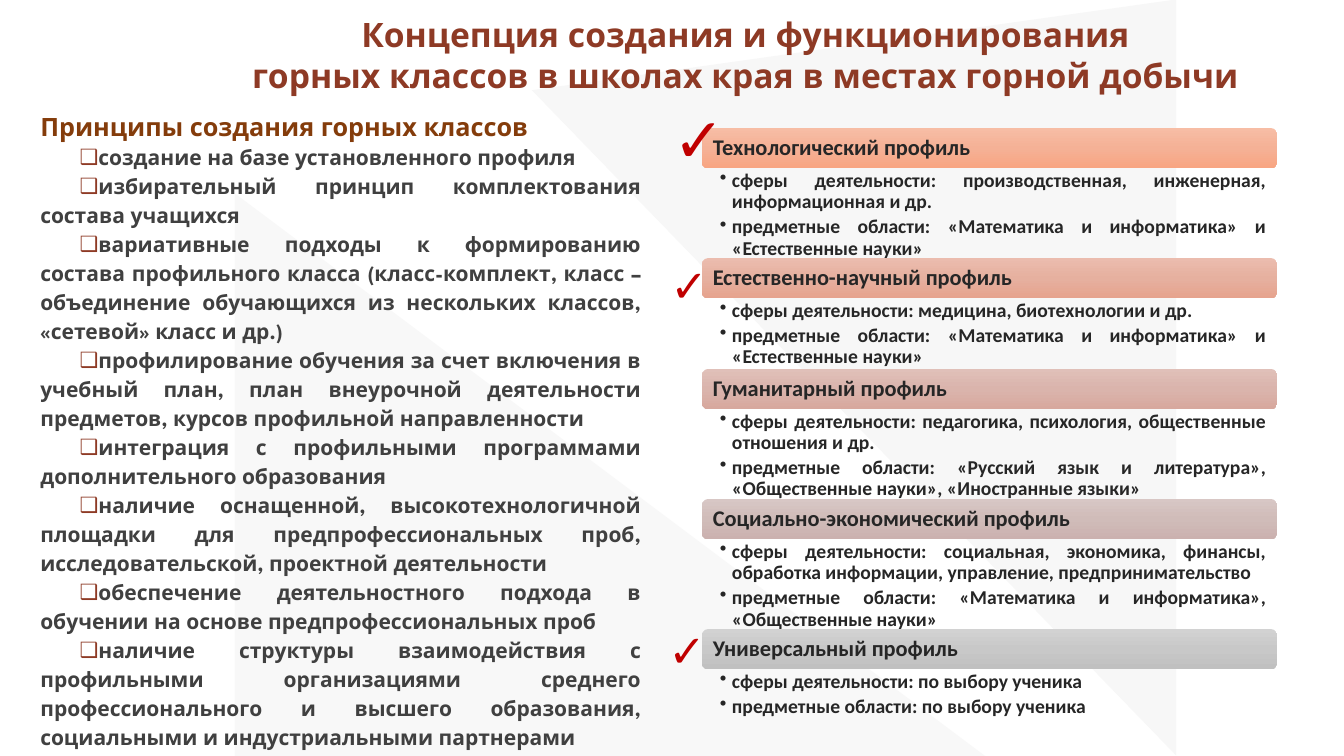
from copy import deepcopy

from lxml import etree
from pptx import Presentation
from pptx.dml.color import RGBColor
from pptx.enum.shapes import MSO_SHAPE
from pptx.enum.text import MSO_ANCHOR, MSO_AUTO_SIZE, PP_ALIGN
from pptx.oxml.ns import qn
from pptx.util import Emu, Pt

TRIANGLE, ROUNDED = MSO_SHAPE.ISOSCELES_TRIANGLE, MSO_SHAPE.ROUNDED_RECTANGLE
TOP, MIDDLE = MSO_ANCHOR.TOP, MSO_ANCHOR.MIDDLE
LEFT, CENTER, JUSTIFY = PP_ALIGN.LEFT, PP_ALIGN.CENTER, PP_ALIGN.JUSTIFY
NO_FIT = MSO_AUTO_SIZE.NONE

EMU_PER_PX = 9144  # 100 px to the inch
HEADING_FONT, PROFILE_FONT = "League Spartan", "Calibri"
RUST, BROWN, RED = "8E3A25", "843C0B", "C00000"
GREY, DARK, PALE = "404040", "262626", "ECECEC"

TITLE = ["Концепция создания и функционирования",
         "горных классов в школах края в местах горной добычи"]
PRINCIPLES_HEADING = "Принципы создания горных классов"
PRINCIPLES = [
    "создание на базе установленного профиля",
    "избирательный принцип комплектования состава учащихся",
    "вариативные подходы к формированию состава профильного класса (класс-комплект, "
    "класс – объединение обучающихся из нескольких классов, «сетевой» класс и др.)",
    "профилирование обучения за счет включения в учебный план, план внеурочной "
    "деятельности предметов, курсов профильной направленности",
    "интеграция с профильными программами дополнительного образования",
    "наличие оснащенной, высокотехнологичной площадки для предпрофессиональных проб, "
    "исследовательской, проектной деятельности",
    "обеспечение деятельностного подхода в обучении на основе предпрофессиональных проб",
    "наличие структуры взаимодействия с профильными организациями среднего "
    "профессионального и высшего образования, социальными и индустриальными партнерами",
]
# name, gradient, height of the list, activities, subjects
PROFILES = [
    ("Технологический профиль", ("F7BDA5", "F5B196", "F8A582"), 89,
     "производственная, инженерная, информационная и др.",
     "«Математика и информатика» и «Естественные науки»"),
    ("Естественно-научный профиль", ("EBBCAE", "E6B09F", "E6A38E"), 70,
     "медицина, биотехнологии и др.",
     "«Математика и информатика» и «Естественные науки»"),
    ("Гуманитарный профиль", ("E0C0B9", "DAB4AC", "D7A89E"), 89,
     "педагогика, психология, общественные отношения и др.",
     "«Русский язык и литература», «Общественные науки», «Иностранные языки»"),
    ("Социально-экономический профиль", ("D8C7C5", "D0BCB9", "CBB1AF"), 89,
     "социальная, экономика, финансы, обработка информации, управление, "
     "предпринимательство",
     "«Математика и информатика», «Общественные науки»"),
    ("Универсальный профиль", ("D2D2D2", "C8C8C8", "C0C0C0"), 49,
     "по выбору ученика", "по выбору ученика"),
]
PROFILE_LEFT, PROFILE_TOP, PROFILE_WIDTH, BAR_HEIGHT = 696, 127, 571, 40
# left, top, width, height, size, bold
TICKS = [(653, 609, 43, 65, 32, False), (655, 247, 43, 65, 32, False),
         (658, 90, 43, 86, 44, True)]


def px(n):
    return Emu(n * EMU_PER_PX)


def rgb(color):
    return RGBColor.from_string(color)


def place(sp, left, top, width, height):
    sp.left, sp.top, sp.width, sp.height = px(left), px(top), px(width), px(height)


def set_frame(sp, anchor=TOP, insets=(10, 5, 10, 5)):
    tf = sp.text_frame
    tf.word_wrap, tf.auto_size, tf.vertical_anchor = True, NO_FIT, anchor
    tf.margin_left, tf.margin_top, tf.margin_right, tf.margin_bottom = map(px, insets)
    return tf


def set_bullet(p, char, color, margin, indent):
    pPr = p._p.get_or_add_pPr()
    pPr.set("marL", str(px(margin)))
    pPr.set("indent", str(px(indent)))
    if char:
        clr = etree.SubElement(pPr, qn("a:buClr"))
        etree.SubElement(clr, qn("a:srgbClr"), val=color)
        etree.SubElement(pPr, qn("a:buChar"), char=char)
    else:
        etree.SubElement(pPr, qn("a:buNone"))


def add_text(tf, text, size, color, font=PROFILE_FONT, bold=True, align=JUSTIFY,
             spacing=1.0, after=0, bullet=None, bullet_color=DARK, margin=0, indent=0):
    """Fill the first paragraph if it is still empty, otherwise append one."""
    p = tf.paragraphs[0] if not tf.paragraphs[0].runs else tf.add_paragraph()
    set_bullet(p, bullet, bullet_color, margin, indent)
    p.alignment, p.line_spacing = align, spacing
    p.space_before, p.space_after = Pt(0), Pt(after)
    r = p.add_run()
    r.text = text
    r.font.size, r.font.bold, r.font.name = Pt(size), bold, font
    r.font.color.rgb = rgb(color)


def add_plain_shape(s, kind, *box):
    sp = s.shapes.add_shape(kind, *map(px, box))
    sp.shadow.inherit = False
    sp.line.fill.background()
    return sp


def add_backdrop(s, box, rotation, apex, opacity):
    sp = add_plain_shape(s, TRIANGLE, *box)
    sp.rotation, sp.adjustments[0] = rotation, apex
    sp.fill.solid()
    sp.fill.fore_color.rgb = rgb(PALE)
    clr = sp.fill._xPr.find(qn("a:solidFill"))[0]
    etree.SubElement(clr, qn("a:alpha"), val=str(opacity * 1000))
    return sp


def fill_gradient(sp, colors):
    """Spread the three colours evenly from top to bottom."""
    sp.fill.gradient()
    sp.fill.gradient_angle = 270
    stops = sp._element.spPr.find(qn("a:gradFill")).find(qn("a:gsLst"))
    stops.insert(1, deepcopy(stops[0]))
    for i, (stop, color) in enumerate(zip(sp.fill.gradient_stops, colors)):
        stop.position = i / 2
        stop.color.rgb = rgb(color)


def add_profile(s, top, name, colors, height, activities, subjects):
    bar = add_plain_shape(s, ROUNDED, PROFILE_LEFT, top, PROFILE_WIDTH, BAR_HEIGHT)
    fill_gradient(bar, colors)
    add_text(set_frame(bar, MIDDLE, (9, 7, 9, 7)), name, 16, DARK, spacing=0.9)
    box = s.shapes.add_textbox(*map(px, (PROFILE_LEFT, top + BAR_HEIGHT,
                                         PROFILE_WIDTH, height)))
    tf = set_frame(box, insets=(18, 2, 11, 2))
    for text in (f"сферы деятельности: {activities}", f"предметные области: {subjects}"):
        add_text(tf, text, 14, DARK, spacing=0.9, after=3, bullet="•",
                 margin=12, indent=-12)


def add_tick(s, left, top, width, height, size, bold):
    box = s.shapes.add_textbox(*map(px, (left, top, width, height)))
    add_text(set_frame(box), "✓", size, RED, bold=bold, align=LEFT, spacing=1.07)


def main():
    prs = Presentation()
    prs.slide_width, prs.slide_height = px(1333), px(750)
    s = prs.slides.add_slide(prs.slide_layouts[1])
    title, body = s.placeholders

    backdrops = [add_backdrop(s, (358, 67, 750, 1000), 90, 1, 36),
                 add_backdrop(s, (472, 55, 750, 639), 270, 0.88, 41)]
    for i, sp in enumerate(backdrops):
        s.shapes._spTree.insert(2 + i, sp._element)

    place(title, 172, 9, 1135, 95)
    tf = set_frame(title)
    for line in TITLE:
        add_text(tf, line, 24, RUST, HEADING_FONT, align=CENTER)

    place(body, 30, 105, 616, 645)
    tf = set_frame(body)
    add_text(tf, PRINCIPLES_HEADING, 18, BROWN, HEADING_FONT)
    for principle in PRINCIPLES:
        add_text(tf, principle, 15, GREY, HEADING_FONT, spacing=1.15,
                 bullet="❑", bullet_color=RUST, indent=39)

    top = PROFILE_TOP
    for name, colors, height, activities, subjects in PROFILES:
        add_profile(s, top, name, colors, height, activities, subjects)
        top += BAR_HEIGHT + height
    for tick in TICKS:
        add_tick(s, *tick)
    prs.save("out.pptx")


if __name__ == "__main__":
    main()
